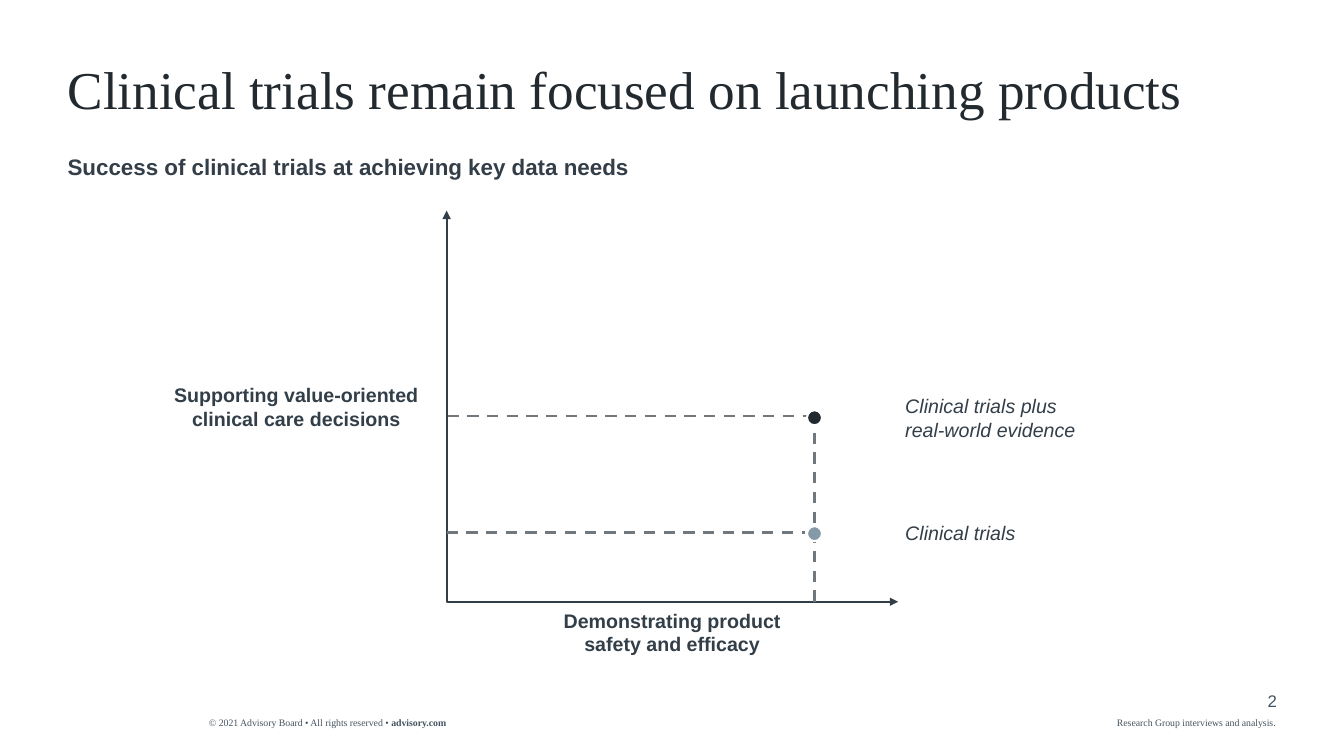
from lxml.etree import SubElement
from pptx import Presentation
from pptx.dml.color import RGBColor
from pptx.enum.dml import MSO_LINE
from pptx.enum.shapes import MSO_CONNECTOR, MSO_SHAPE
from pptx.enum.text import MSO_ANCHOR, PP_ALIGN
from pptx.oxml.ns import qn
from pptx.util import Pt


def color(code):
    return RGBColor.from_string(code)


def write(box, text, place, size, code, font="Arial", align=PP_ALIGN.LEFT,
          bold=False, italic=False, spacing=1, bold_ending=""):
    box.left, box.top, box.width, box.height = [Pt(length) for length in place]
    frame = box.text_frame
    frame.word_wrap = True
    frame.vertical_anchor = MSO_ANCHOR.TOP
    frame.margin_left = frame.margin_top = frame.margin_right = frame.margin_bottom = 0
    para = frame.paragraphs[0]
    para.alignment = align
    para.line_spacing = spacing
    for words, heavy in ((text, bold), (bold_ending, True)):
        if words:
            span = para.add_run()
            span.text = words
            span.font.name = font
            span.font.size = Pt(size)
            span.font.bold = heavy
            span.font.italic = italic
            span.font.color.rgb = color(code)


deck = Presentation()
deck.slide_width, deck.slide_height = Pt(960), Pt(540)
page = deck.slides.add_slide(deck.slide_layouts[5])
shapes = page.shapes

serif = "Times New Roman"
center = PP_ALIGN.CENTER
write(shapes.title, "Clinical trials remain focused on launching products",
      (48.3, 45.2, 863.4, 42.7), 38, "222A30", font=serif, spacing=0.9)

labels = [
    ("© 2021 Advisory Board • All rights reserved • ", (149.3, 511.8, 234.7, 8.6), 7, "445460",
     {"font": serif, "bold_ending": "advisory.com"}),
    ("Research Group interviews and analysis.", (797.8, 511.8, 114.5, 8.6), 7, "445460",
     {"font": serif}),
    ("2", (876.2, 493.2, 36, 14.4), 12, "445460", {"align": PP_ALIGN.RIGHT}),
    ("Success of clinical trials at achieving key data needs", (48.3, 109.4, 442.8, 19.4), 16,
     "333E48", {"bold": True}),
    ("Supporting value-oriented clinical care decisions", (122.4, 273.6, 178.6, 33.8), 14,
     "323E48", {"bold": True, "align": center}),
    ("Demonstrating product safety and efficacy", (397.4, 434.9, 165.6, 33.8), 14,
     "323E48", {"bold": True, "align": center}),
    ("Clinical trials plus real-world evidence", (646.6, 281.5, 131, 33.8), 14,
     "333E48", {"italic": True}),
    ("Clinical trials", (646.6, 372.2, 131, 17.3), 14, "333E48", {"italic": True}),
]
for text, place, size, code, style in labels:
    write(shapes.add_textbox(0, 0, 0, 0), text, place, size, code, **style)

origin_x, origin_y = 319, 429.8
builder = shapes.build_freeform(Pt(641.5), Pt(origin_y), scale=1)
builder.add_line_segments([(Pt(origin_x), Pt(origin_y)), (Pt(origin_x), Pt(150.5))], close=False)
axes = builder.convert_to_shape()
axes.shadow.inherit = False
axes.fill.background()
axes.line.color.rgb = color("323E48")
axes.line.width = Pt(1.5)
outline = axes._element.spPr.find(qn("a:ln"))
for end in ("a:headEnd", "a:tailEnd"):
    SubElement(outline, qn(end), type="triangle")

trials_x = 581.8
guides = [
    (origin_x, 380.2, 575.3, 380.2),
    (319.7, 297.2, trials_x, 297.2),
    (trials_x, origin_y, trials_x, 293),
]
for ends in guides:
    guide = shapes.add_connector(MSO_CONNECTOR.STRAIGHT, *[Pt(length) for length in ends])
    guide.line.color.rgb = color("70787E")
    guide.line.width = Pt(2)
    guide.line.dash_style = MSO_LINE.DASH
    SubElement(guide._element.spPr, qn("a:effectLst"))

diameter = 10.8
for middle, code in ((381.2, "859AA9"), (298.4, "222A30")):
    dot = shapes.add_shape(MSO_SHAPE.OVAL, Pt(trials_x - diameter / 2), Pt(middle - diameter / 2),
                           Pt(diameter), Pt(diameter))
    dot.shadow.inherit = False
    dot.fill.solid()
    dot.fill.fore_color.rgb = color(code)
    dot.line.color.rgb = color("FFFFFF")
    dot.line.width = Pt(1.5)

deck.save("out.pptx")
